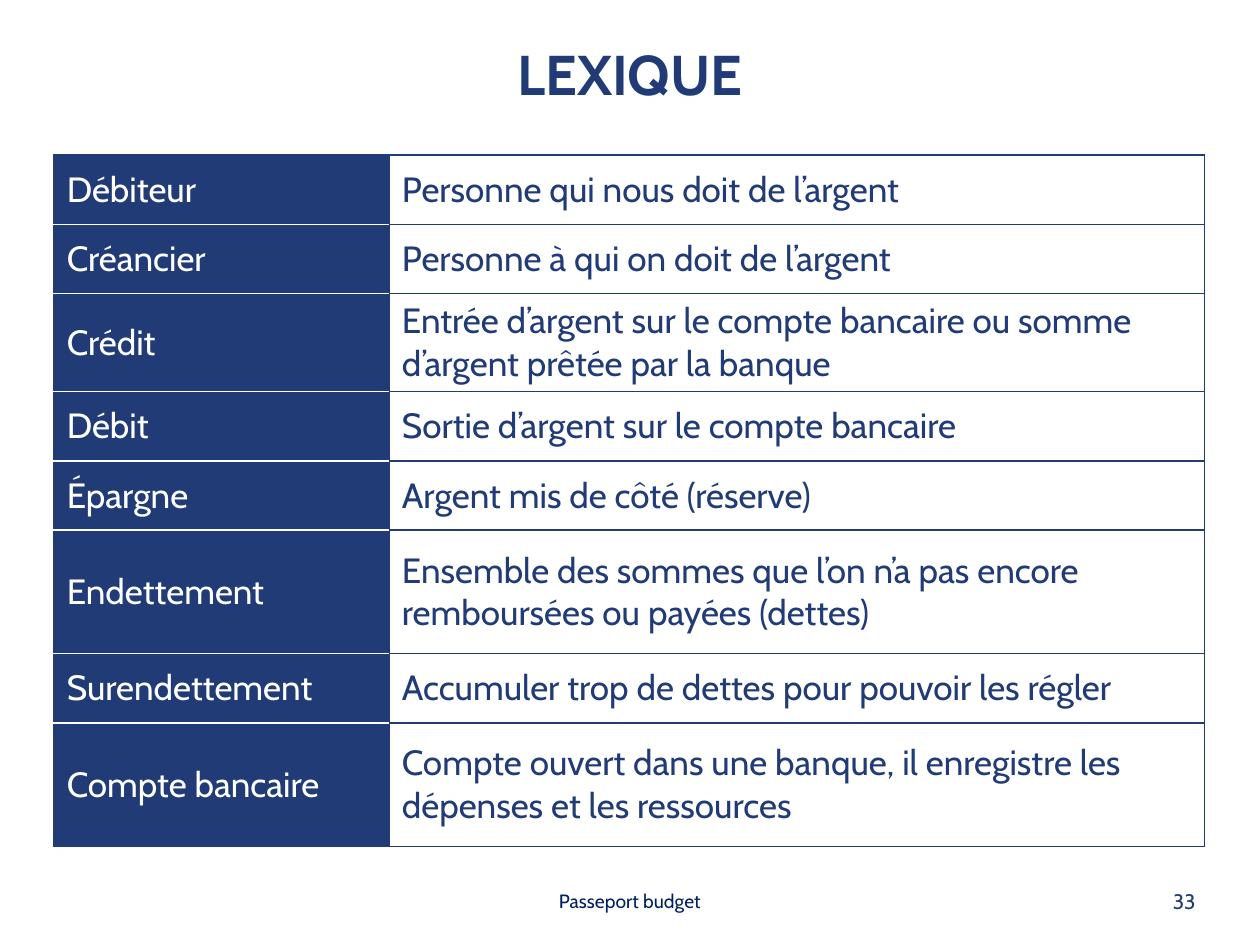
from lxml import etree
from pptx import Presentation
from pptx.dml.color import RGBColor
from pptx.enum.text import MSO_ANCHOR as Anchor, MSO_AUTO_SIZE as AutoSize, PP_ALIGN as Align
from pptx.oxml.ns import qn
from pptx.util import Inches, Pt

NAVY = RGBColor(0x21, 0x3B, 0x76)
FOOTER_BLUE = RGBColor(0x00, 0x20, 0x60)
WHITE = RGBColor(0xFF, 0xFF, 0xFF)
FONT = "Cabin"

ROW, TALL_ROW = 0.55, 0.98
GLOSSARY = [
    ("Débiteur", "Personne qui nous doit de l’argent", ROW),
    ("Créancier", "Personne à qui on doit de l’argent", ROW),
    ("Crédit", "Entrée d’argent sur le compte bancaire ou somme "
               "d’argent prêtée par la banque", ROW),
    ("Débit", "Sortie d’argent sur le compte bancaire", ROW),
    ("Épargne", "Argent mis de côté (réserve)", ROW),
    ("Endettement", "Ensemble des sommes que l’on n’a pas encore "
                    "remboursées ou payées (dettes)", TALL_ROW),
    ("Surendettement", "Accumuler trop de dettes pour pouvoir les régler", ROW),
    ("Compte bancaire", "Compte ouvert dans une banque, il enregistre les "
                        "dépenses et les ressources", TALL_ROW),
]


def write(frame, text, size, color, bold=False, align=Align.LEFT):
    paragraph = frame.paragraphs[0]
    paragraph.alignment = align
    run = paragraph.add_run()
    run.text = text
    font = run.font
    font.name, font.size, font.bold = FONT, Pt(size), bold
    font.color.rgb = color


def set_frame(frame, anchor, inset=None):
    frame.word_wrap = True
    frame.auto_size = AutoSize.NONE
    frame.vertical_anchor = anchor
    if inset is not None:
        frame.margin_left = frame.margin_right = inset
        frame.margin_top = frame.margin_bottom = inset


def add_title(slide, left, top, width, height):
    title = slide.shapes.title
    title.left, title.top, title.width, title.height = left, top, width, height
    set_frame(title.text_frame, Anchor.TOP, Inches(0.05))
    write(title.text_frame, "LEXIQUE", 32, NAVY, bold=True, align=Align.CENTER)


def set_borders(cell, left, right, top, bottom):
    properties = cell._tc.get_or_add_tcPr()
    sides = zip(("a:lnL", "a:lnR", "a:lnT", "a:lnB"), (left, right, top, bottom))
    for position, (tag, color) in enumerate(sides):
        line = etree.Element(qn(tag), w=str(Pt(1)))
        fill = etree.SubElement(line, qn("a:solidFill"))
        etree.SubElement(fill, qn("a:srgbClr"), val=str(color))
        properties.insert(position, line)


def fill_cell(cell, text, text_color, fill_color, top, bottom):
    cell.vertical_anchor = Anchor.MIDDLE
    cell.fill.solid()
    cell.fill.fore_color.rgb = fill_color
    write(cell.text_frame, text, 20, text_color)
    set_borders(cell, NAVY, NAVY, top, bottom)


def add_glossary(slide, left, top, width, height):
    last = len(GLOSSARY) - 1
    table = slide.shapes.add_table(last + 1, 2, left, top, width, height).table
    term_width = Inches(2.66)
    table.columns[0].width = term_width
    table.columns[1].width = width - term_width
    for index, (term, definition, row_height) in enumerate(GLOSSARY):
        table.rows[index].height = Inches(row_height)
        # White rules separate the terms, navy ones the definitions
        fill_cell(table.cell(index, 0), term, WHITE, NAVY,
                  top=NAVY if index == 0 else WHITE,
                  bottom=NAVY if index == last else WHITE)
        fill_cell(table.cell(index, 1), definition, NAVY, WHITE, top=NAVY, bottom=NAVY)


def add_footer(slide, left, top, width, height):
    # Booklet name, centred on the slide
    booklet_width = Inches(3.17)
    booklet = slide.shapes.add_textbox(
        left + (width - booklet_width) // 2, top, booklet_width, height).text_frame
    set_frame(booklet, Anchor.MIDDLE, Inches(0.05))
    write(booklet, "Passeport budget", 11, FOOTER_BLUE, align=Align.CENTER)

    # Page number
    page = slide.shapes.add_textbox(
        Inches(9.21), top, Inches(0.43), height).text_frame
    set_frame(page, Anchor.TOP)
    write(page, "33", 12, NAVY)


def main():
    deck = Presentation()
    deck.slide_width, deck.slide_height = Inches(10), Inches(7.5)
    title_only = deck.slide_layouts[5]
    slide = deck.slides.add_slide(title_only)
    add_title(slide, Inches(1.88), Inches(0.26), Inches(6.24), Inches(0.64))
    add_glossary(slide, Inches(0.43), Inches(1.23), Inches(9.13), Inches(5.49))
    add_footer(slide, 0, Inches(7), deck.slide_width, Inches(0.3))
    deck.save("out.pptx")


if __name__ == "__main__":
    main()
